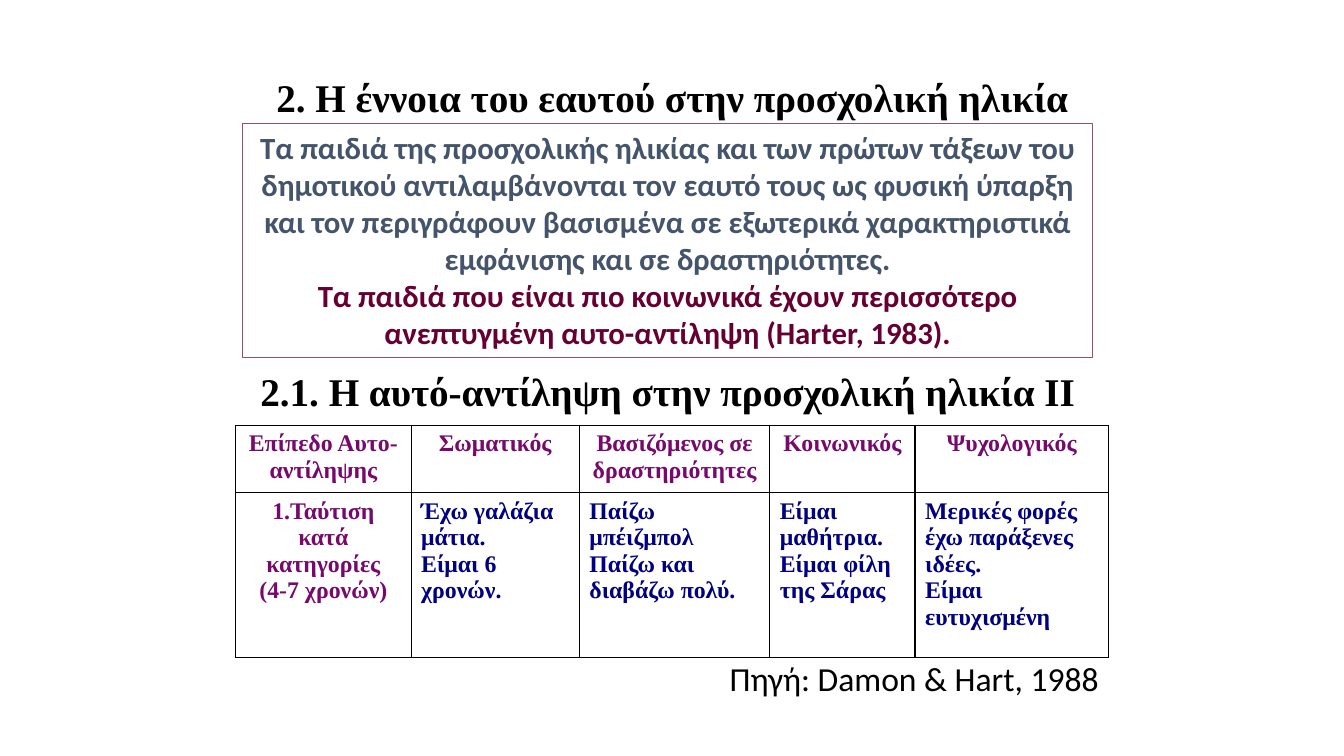
from dataclasses import dataclass

from lxml.etree import SubElement
from pptx import Presentation
from pptx.dml.color import RGBColor
from pptx.enum.shapes import MSO_SHAPE
from pptx.enum.text import MSO_ANCHOR, MSO_AUTO_SIZE, PP_ALIGN
from pptx.oxml.ns import qn
from pptx.util import Cm, Pt


@dataclass(frozen=True)
class Theme:
    serif: str = "Times New Roman"
    sans: str = "Calibri"
    black: str = "000000"
    slate: str = "44546A"
    wine: str = "660033"
    frame: str = "954F72"
    purple: str = "77096D"
    navy: str = "000080"
    heading_size: int = 28
    source_size: int = 24
    statement_size: int = 22
    table_size: int = 17


def write(paragraph, text, *, font, size, color, bold=True, align=PP_ALIGN.LEFT):
    paragraph.alignment = align
    paragraph.line_spacing = 1.0
    paragraph.space_before = Pt(0)
    run = paragraph.add_run()
    run.text = text
    run.font.name = font
    run.font.size = Pt(size)
    run.font.bold = bold
    run.font.color.rgb = RGBColor.from_string(color)


class SlideBuilder:
    def __init__(self, slide, theme):
        self.slide = slide
        self.theme = theme

    def prepare(self, shape, wrap=True):
        frame = shape.text_frame
        frame.word_wrap = wrap
        frame.auto_size = MSO_AUTO_SIZE.NONE
        frame.vertical_anchor = MSO_ANCHOR.TOP
        return frame.paragraphs[0]

    def heading(self, shape, text):
        write(self.prepare(shape), text, font=self.theme.serif,
              size=self.theme.heading_size, color=self.theme.black,
              align=PP_ALIGN.CENTER)

    def title(self, text, left, top, width, height):
        title = self.slide.shapes.title
        title.left, title.top = Cm(left), Cm(top)
        title.width, title.height = Cm(width), Cm(height)
        self.heading(title, text)

    def subtitle(self, text, left, top, width, height):
        box = self.slide.shapes.add_textbox(Cm(left), Cm(top), Cm(width), Cm(height))
        self.heading(box, text)

    def statement(self, claim, finding, left, top, width, height):
        panel = self.slide.shapes.add_shape(
            MSO_SHAPE.RECTANGLE, Cm(left), Cm(top), Cm(width), Cm(height))
        panel.shadow.inherit = False
        panel.fill.background()
        panel.line.color.rgb = RGBColor.from_string(self.theme.frame)
        panel.line.width = Pt(0.75)
        paragraph = self.prepare(panel)
        style = dict(font=self.theme.sans, size=self.theme.statement_size,
                     align=PP_ALIGN.CENTER)
        write(paragraph, claim, color=self.theme.slate, **style)
        paragraph.add_line_break()
        write(paragraph, finding, color=self.theme.wine, **style)

    def source(self, text, left, top, width, height):
        box = self.slide.shapes.add_textbox(Cm(left), Cm(top), Cm(width), Cm(height))
        write(self.prepare(box, wrap=False), text, font=self.theme.sans,
              size=self.theme.source_size, color=self.theme.black, bold=False)

    def border(self, cell):
        properties = cell._tc.get_or_add_tcPr()
        for side in ("a:lnL", "a:lnR", "a:lnT", "a:lnB"):
            line = SubElement(properties, qn(side), w=str(Pt(1)))
            fill = SubElement(line, qn("a:solidFill"))
            SubElement(fill, qn("a:srgbClr"), val=self.theme.black)

    def table(self, rows, left, top, widths, heights):
        table = self.slide.shapes.add_table(
            len(heights), len(widths), Cm(left), Cm(top),
            Cm(sum(widths)), Cm(sum(heights))).table
        table.first_row = table.horz_banding = False
        for column, width in zip(table.columns, widths):
            column.width = Cm(width)
        for row, height in zip(table.rows, heights):
            row.height = Cm(height)
        for r, row in enumerate(rows):
            for c, lines in enumerate(row):
                cell = table.cell(r, c)
                self.border(cell)
                cell.fill.background()
                is_label = r == 0 or c == 0
                for i, line in enumerate(lines):
                    frame = cell.text_frame
                    paragraph = frame.add_paragraph() if i else frame.paragraphs[0]
                    write(paragraph, line, font=self.theme.serif,
                          size=self.theme.table_size,
                          color=self.theme.purple if is_label else self.theme.navy,
                          align=PP_ALIGN.CENTER if is_label else PP_ALIGN.LEFT)


LEVELS = [
    [["Επίπεδο Αυτο-αντίληψης"], ["Σωματικός"], ["Βασιζόμενος σε δραστηριότητες"],
     ["Κοινωνικός"], ["Ψυχολογικός"]],
    [["1.Ταύτιση κατά κατηγορίες", "(4-7 χρονών)"],
     ["Έχω γαλάζια μάτια.", "Είμαι 6 χρονών."],
     ["Παίζω μπέιζμπολ", "Παίζω και διαβάζω πολύ."],
     ["Είμαι μαθήτρια.", "Είμαι φίλη της Σάρας"],
     ["Μερικές φορές έχω παράξενες ιδέες.", "Είμαι ευτυχισμένη"]],
]


def main():
    deck = Presentation()
    deck.slide_width, deck.slide_height = Cm(33.87), Cm(19.05)
    page = SlideBuilder(deck.slides.add_slide(deck.slide_layouts[5]), Theme())
    page.statement(
        "Τα παιδιά της προσχολικής ηλικίας και των πρώτων τάξεων του δημοτικού "
        "αντιλαμβάνονται τον εαυτό τους ως φυσική ύπαρξη και τον περιγράφουν "
        "βασισμένα σε εξωτερικά χαρακτηριστικά εμφάνισης και σε δραστηριότητες.",
        "Τα παιδιά που είναι πιο κοινωνικά έχουν περισσότερο ανεπτυγμένη "
        "αυτo-αντίληψη (Harter, 1983).",
        6.12, 3.12, 21.41, 5.89)
    page.title("2. Η έννοια του εαυτού στην προσχολική ηλικία", 5.94, 1.73, 22, 1.45)
    page.subtitle("2.1. Η αυτό-αντίληψη στην προσχολική ηλικία ΙΙ",
                  6.12, 9.12, 21.41, 1.45)
    page.table(LEVELS, 5.94, 10.72, [4.42, 4.24, 4.8, 3.66, 4.88], [1.7, 4.14])
    page.source("Πηγή: Damon & Hart, 1988", 18.14, 16.46, 10, 1.27)
    deck.save("out.pptx")


if __name__ == "__main__":
    main()
